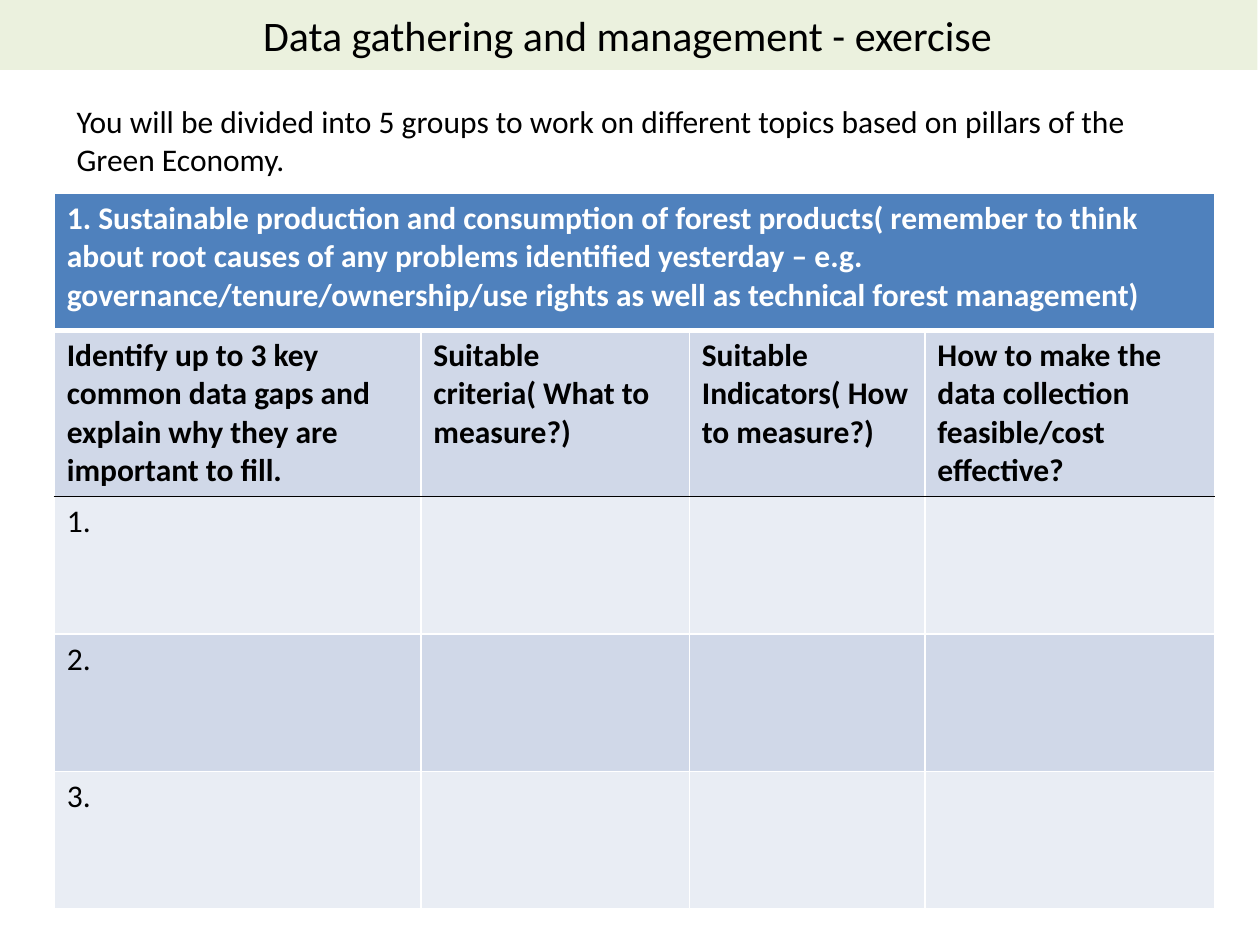
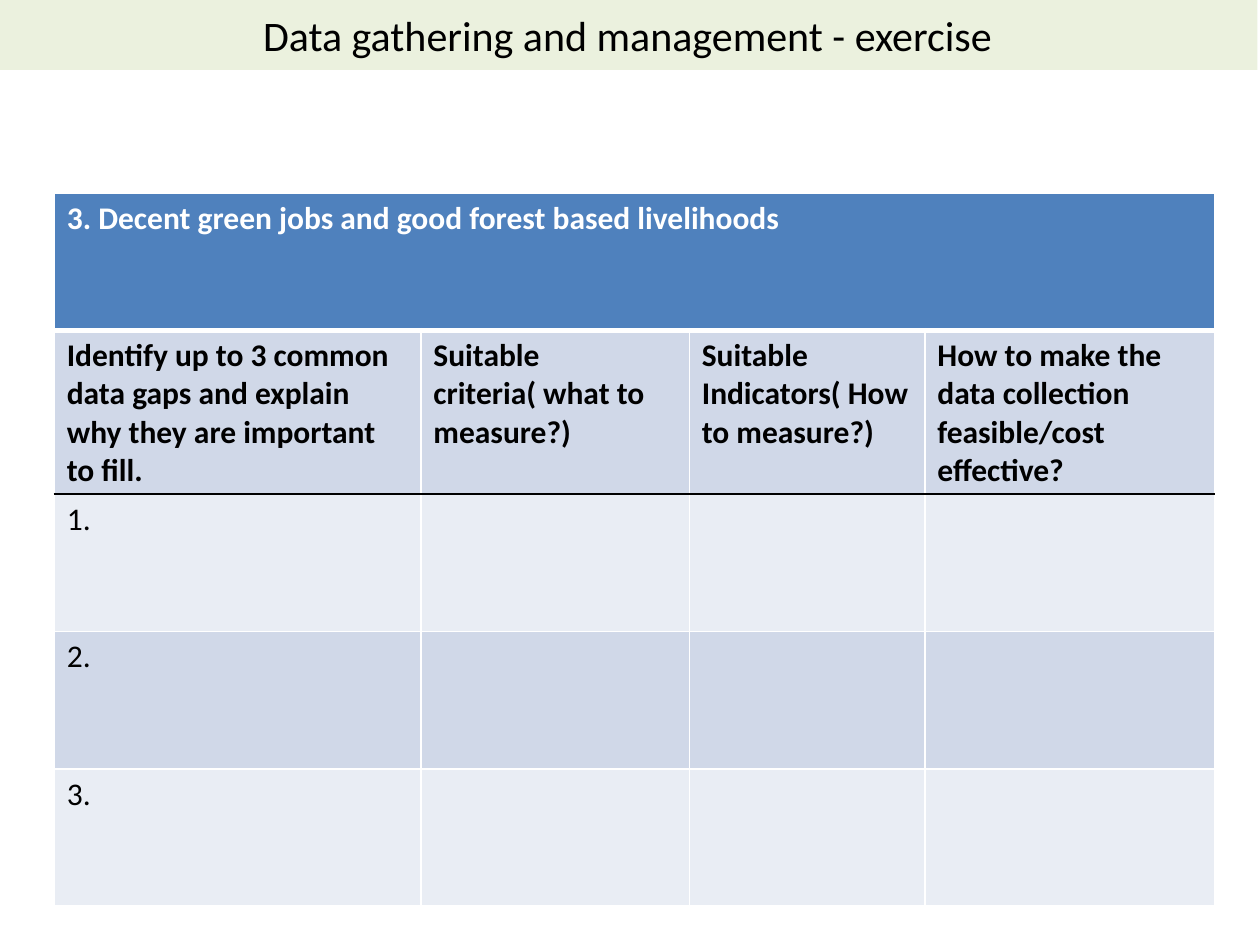
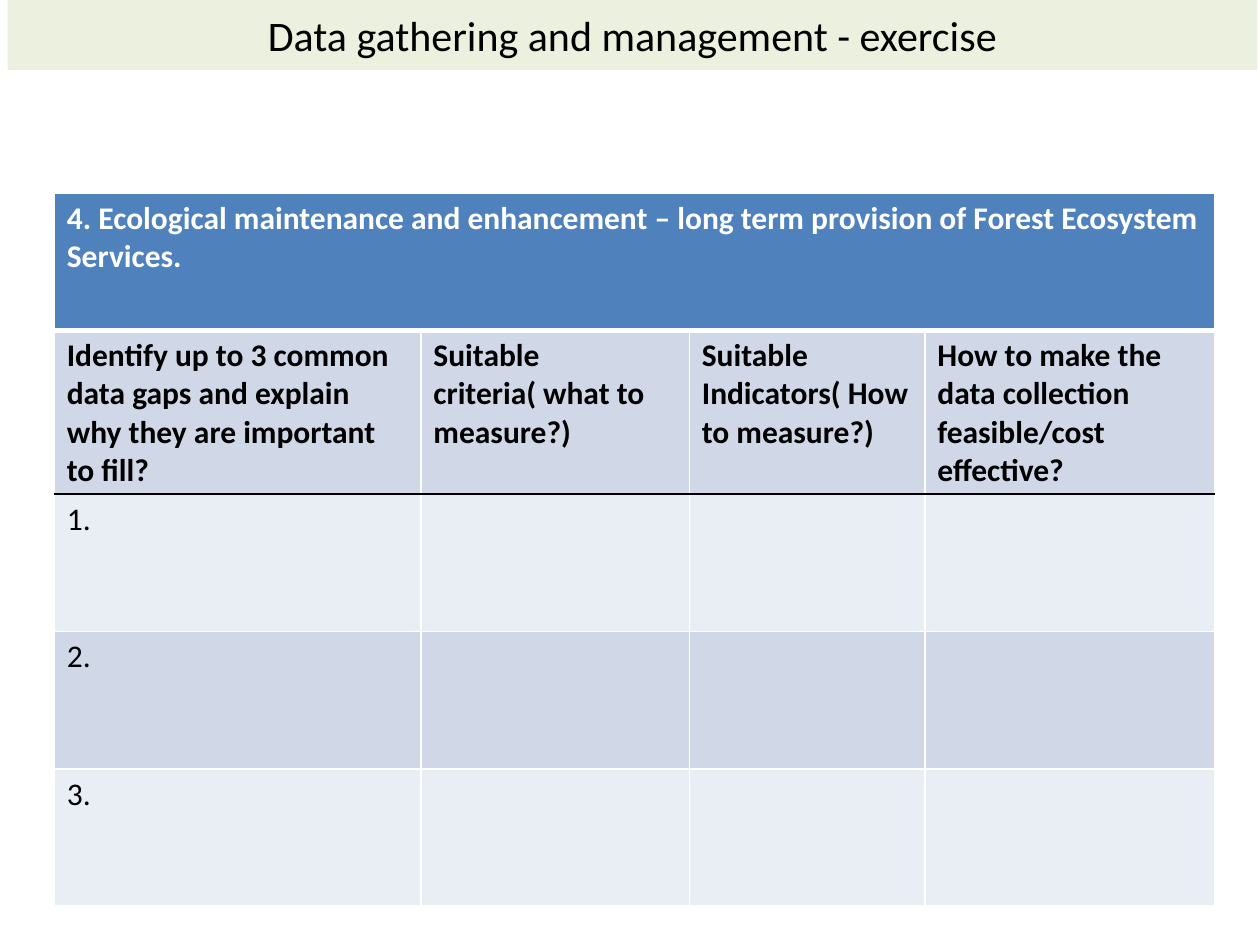
"""Build three exercise slides, each with a worksheet table for one Green Economy topic."""
from lxml import etree
from pptx import Presentation
from pptx.dml.color import RGBColor
from pptx.enum.shapes import MSO_SHAPE
from pptx.enum.text import MSO_ANCHOR, MSO_AUTO_SIZE, PP_ALIGN
from pptx.oxml.ns import qn
from pptx.util import Pt

RECTANGLE = MSO_SHAPE.RECTANGLE
CENTER = PP_ALIGN.CENTER
MIDDLE = MSO_ANCHOR.MIDDLE
GROW = MSO_AUTO_SIZE.SHAPE_TO_FIT_TEXT

BLACK, WHITE = "000000", "FFFFFF"
BAND_GREEN, TOPIC_BLUE = "EBF1DE", "4F81BD"
ROW_DARK, ROW_LIGHT = "D0D8E8", "E9EDF4"
ROW_FILLS = [TOPIC_BLUE, ROW_DARK, ROW_LIGHT, ROW_DARK, ROW_LIGHT]
ROW_RULES = [(WHITE, 1), (WHITE, 3), (BLACK, 1), (WHITE, 1), (WHITE, 1), (WHITE, 1)]
COLUMN_WIDTHS = [209.5, 153.4, 134.6, 165.6]
ROW_HEIGHT = 78.5

TITLE = "Data gathering and management - exercise"
INTRO = ("You will be divided into 5 groups to work on different topics "
         "based on pillars of the Green Economy.")
INDICATORS = "Suitable Indicators( How to measure?)"
FEASIBILITY = "How to make the data collection feasible/cost effective?"
EXERCISES = [
    (-1.4, 720, INTRO,
     "1. Sustainable production and consumption of forest products( remember to think about "
     "root causes of any problems identified yesterday – e.g. governance/tenure/ownership/use "
     "rights as well as technical forest management)",
     "Identify up to 3 key common data gaps and explain why they are important to fill.",
     "Suitable criteria( What to measure?)"),
    (-1.4, 720, None,
     "3. Decent green jobs and good forest based livelihoods",
     "Identify up to 3 common data gaps and explain why they are important to fill.",
     "Suitable criteria( what to measure?)"),
    (4.3, 714.2, None,
     "4. Ecological maintenance and enhancement – long term provision of Forest Ecosystem Services.",
     "Identify up to 3 common data gaps and explain why they are important to fill?",
     "Suitable criteria( what to measure?)"),
]


def rgb(color):
    return RGBColor.from_string(color)


def write(frame, text, size=18, color=BLACK, bold=False):
    frame.text = text
    font = frame.paragraphs[0].font
    font.name, font.size, font.bold = "Calibri", Pt(size), bold
    font.color.rgb = rgb(color)


prs = Presentation()
prs.slide_width, prs.slide_height = Pt(720), Pt(540)

for band_left, band_width, intro, topic, gaps, criteria in EXERCISES:
    slide = prs.slides.add_slide(prs.slide_layouts[6])

    band = slide.shapes.add_shape(RECTANGLE, Pt(band_left), Pt(0), Pt(band_width), Pt(40))
    band.shadow.inherit = False
    band.fill.solid()
    band.fill.fore_color.rgb = rgb(BAND_GREEN)
    band.line.fill.background()
    band.text_frame.vertical_anchor = MIDDLE
    write(band.text_frame, TITLE, 24)
    band.text_frame.paragraphs[0].alignment = CENTER

    rows = [[topic, "", "", ""], [gaps, criteria, INDICATORS, FEASIBILITY]]
    rows += [[f"{number}.", "", "", ""] for number in range(1, 4)]
    worksheet = slide.shapes.add_table(
        len(rows), len(COLUMN_WIDTHS), Pt(31), Pt(110.2),
        Pt(sum(COLUMN_WIDTHS)), Pt(ROW_HEIGHT * len(rows))).table
    for column, width in zip(worksheet.columns, COLUMN_WIDTHS):
        column.width = Pt(width)

    for r, texts in enumerate(rows):
        worksheet.rows[r].height = Pt(ROW_HEIGHT)
        for c, text in enumerate(texts):
            cell = worksheet.cell(r, c)
            cell.fill.solid()
            cell.fill.fore_color.rgb = rgb(ROW_FILLS[r])
            write(cell.text_frame, text, color=WHITE if r == 0 else BLACK, bold=r < 2)
            sides = {"L": (WHITE, 1), "R": (WHITE, 1), "T": ROW_RULES[r], "B": ROW_RULES[r + 1]}
            for position, (side, (color, weight)) in enumerate(sides.items()):
                border = etree.Element(qn(f"a:ln{side}"), w=str(Pt(weight)))
                paint = etree.SubElement(border, qn("a:solidFill"))
                etree.SubElement(paint, qn("a:srgbClr"), val=color)
                cell._tc.get_or_add_tcPr().insert(position, border)
    worksheet.cell(0, 0).merge(worksheet.cell(0, len(COLUMN_WIDTHS) - 1))

    if intro:
        instruction = slide.shapes.add_textbox(Pt(36.7), Pt(54.7), Pt(641), Pt(51)).text_frame
        instruction.word_wrap = True
        instruction.auto_size = GROW
        write(instruction, intro)

prs.save("out.pptx")
